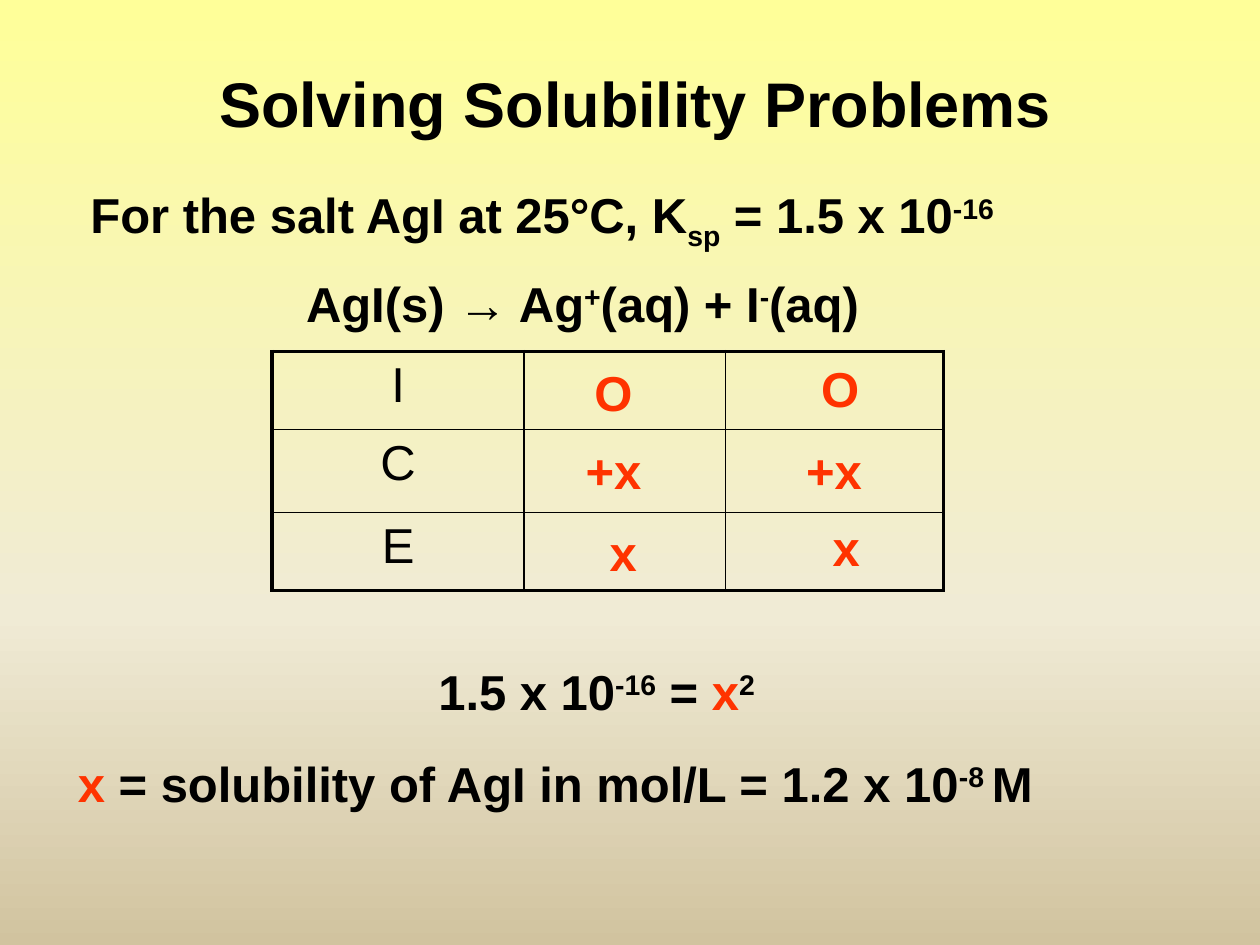
from copy import deepcopy

from lxml import etree
from pptx import Presentation
from pptx.dml.color import RGBColor
from pptx.enum.text import MSO_ANCHOR, MSO_AUTO_SIZE, PP_ALIGN
from pptx.oxml.ns import qn
from pptx.util import Pt

BLACK = RGBColor(0x00, 0x00, 0x00)
RED = RGBColor(0xFF, 0x33, 0x00)
YELLOW = RGBColor(0xFF, 0xFF, 0x99)
CREAM = RGBColor(0xF0, 0xEB, 0xD5)
TAN = RGBColor(0xD1, 0xC3, 0x9F)

CENTER = PP_ALIGN.CENTER
MIDDLE = MSO_ANCHOR.MIDDLE
GROW = MSO_AUTO_SIZE.SHAPE_TO_FIT_TEXT

TITLE_ONLY = 5
SUPER, SUB = 30, -25
THICK, THIN = 2.25, 1


class Deck:
    """Holds the style and the current slide."""

    font_name = "Arial"
    title_size = 36
    body_size = 28

    def __init__(self, width, height):
        self.prs = Presentation()
        self.prs.slide_width, self.prs.slide_height = Pt(width), Pt(height)
        self.slide = self.prs.slides.add_slide(self.prs.slide_layouts[TITLE_ONLY])

    def style(self, paragraph, size, color=BLACK, bold=True):
        font = paragraph.font
        font.name, font.size, font.bold = self.font_name, Pt(size), bold
        font.color.rgb = color

    def background(self, stops):
        fill = self.slide.background.fill
        fill.gradient()
        fill.gradient_angle = 270  # counter-clockwise, so top to bottom
        stop_list = self.slide._element.find(".//" + qn("a:gsLst"))
        while len(stop_list) < len(stops):
            stop_list.append(deepcopy(stop_list[-1]))
        for stop, (position, color) in zip(fill.gradient_stops, stops):
            stop.position = position
            stop.color.rgb = color

    def title(self, text, left, top, width, height):
        title = self.slide.shapes.title
        title.left, title.top = Pt(left), Pt(top)
        title.width, title.height = Pt(width), Pt(height)
        frame = title.text_frame
        frame.text = text
        frame.vertical_anchor = MIDDLE
        frame.paragraphs[0].alignment = CENTER
        self.style(frame.paragraphs[0], self.title_size)

    def text(self, parts, left, top, width, color=BLACK, wrap=False):
        """Each part is (text, baseline percent, own colour or None)."""
        box = self.slide.shapes.add_textbox(Pt(left), Pt(top), Pt(width), Pt(41))
        frame = box.text_frame
        frame.word_wrap = wrap
        frame.auto_size = GROW
        paragraph = frame.paragraphs[0]
        self.style(paragraph, self.body_size, color)
        for words, baseline, own_color in parts:
            run = paragraph.add_run()
            run.text = words
            if baseline:
                run._r.get_or_add_rPr().set("baseline", str(baseline * 1000))
            if own_color is not None:
                run.font.color.rgb = own_color

    def border(self, cell, side, width):
        line = etree.SubElement(cell._tc.get_or_add_tcPr(), qn("a:ln" + side),
                                w=str(Pt(width)))
        fill = etree.SubElement(line, qn("a:solidFill"))
        etree.SubElement(fill, qn("a:srgbClr"), val=str(BLACK))

    def table(self, row_labels, left, top, col_widths, row_heights):
        last_row, last_col = len(row_heights) - 1, len(col_widths) - 1
        table = self.slide.shapes.add_table(
            len(row_heights), len(col_widths), Pt(left), Pt(top),
            Pt(sum(col_widths)), Pt(sum(row_heights))).table
        table.first_row = table.horz_banding = False
        for column, width in zip(table.columns, col_widths):
            column.width = Pt(width)
        for r, (label, height) in enumerate(zip(row_labels, row_heights)):
            table.rows[r].height = Pt(height)
            for c in range(len(col_widths)):
                cell = table.cell(r, c)
                # Thick outer frame, thin inner lines
                outer = {"L": c == 0, "R": c == last_col,
                         "T": r == 0, "B": r == last_row}
                for side, is_outer in outer.items():
                    self.border(cell, side, THICK if is_outer else THIN)
                cell.fill.background()
            first = table.cell(r, 0)
            first.text = label
            first.text_frame.paragraphs[0].alignment = CENTER
            self.style(first.text_frame.paragraphs[0], self.body_size, bold=False)


def main():
    deck = Deck(720, 540)
    deck.background([(0, YELLOW), (0.65, CREAM), (1, TAN)])
    deck.title("Solving Solubility Problems", 36, 21.6, 654.5, 74.2)

    # Given constant and dissolution equation
    deck.text([("For the salt AgI at 25°C, K", 0, None), ("sp", SUB, None),
               (" = 1.5 x 10", 0, None), ("-16", SUPER, None)],
              44.6, 102.2, 648.7, wrap=True)
    deck.text([("AgI(s) → Ag", 0, None), ("+", SUPER, None),
               ("(aq) + I", 0, None), ("-", SUPER, None), ("(aq)", 0, None)],
              167.8, 152.6, 336.2)

    # Initial, change, equilibrium table
    deck.table(["I", "C", "E"], 155.5, 200.9, [144, 115.2, 124.6], [44.6, 47.5, 44.6])

    # Concentrations of each ion, laid over the table
    concentrations = [
        ("O", 36.7, (332.6, 203.8), (462.2, 201.6)),
        ("+x", 48.2, (327.6, 248.4), (453.6, 248.4)),
        ("x", 31, (341.3, 295.2), (468.7, 292.3)),
    ]
    for value, width, *places in concentrations:
        for left, top in places:
            deck.text([(value, 0, None)], left, top, width, RED)

    # Solution
    deck.text([("1.5 x 10", 0, None), ("-16", SUPER, None), (" = ", 0, None),
               ("x", 0, RED), ("2", SUPER, None)], 243.4, 374.4, 259.2, wrap=True)
    deck.text([("x", 0, RED), (" = solubility of AgI in mol/L = 1.2 x 10", 0, None),
               ("-8 ", SUPER, None), ("M", 0, None)], 37.4, 427, 569.5)

    deck.prs.save("out.pptx")


if __name__ == "__main__":
    main()
